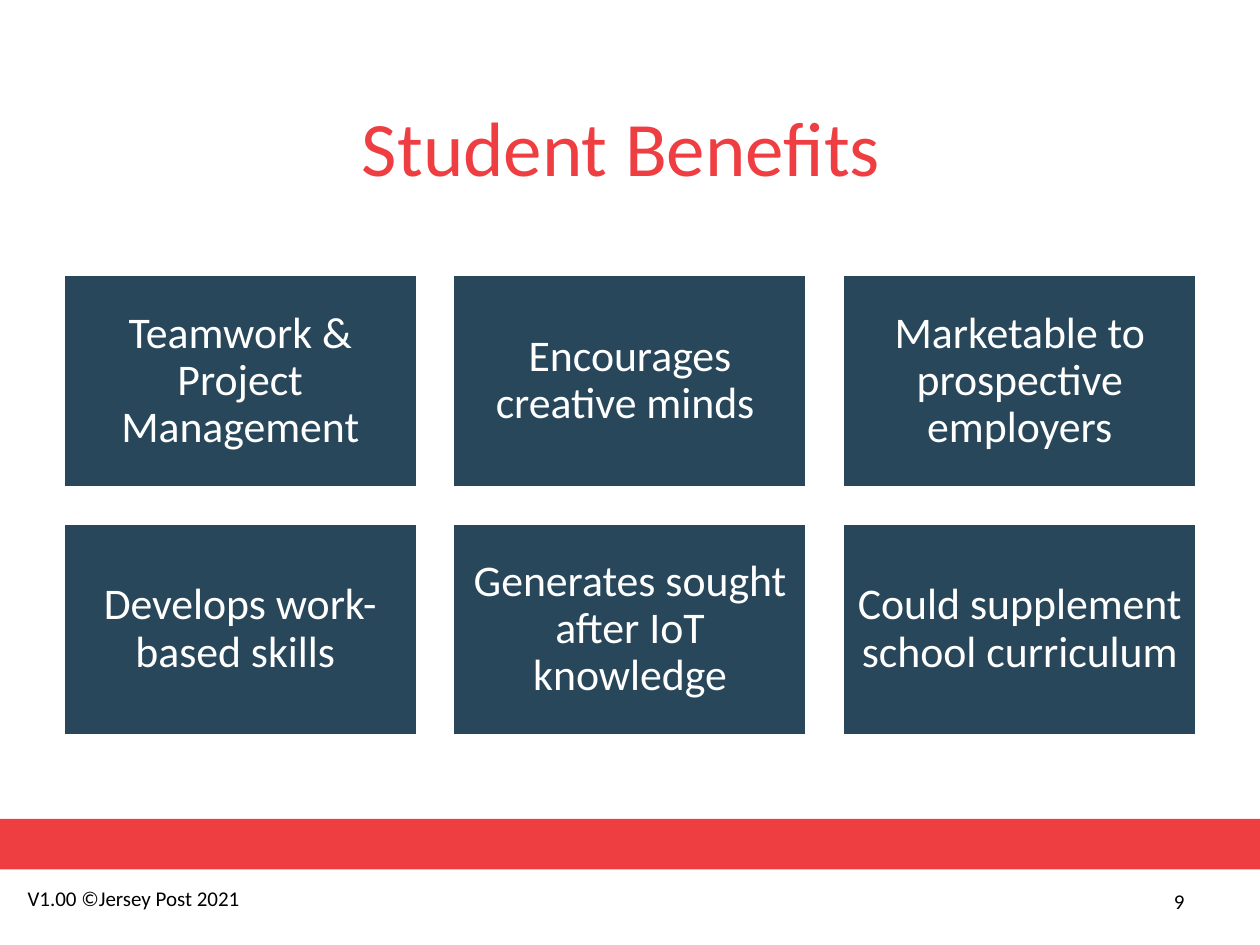
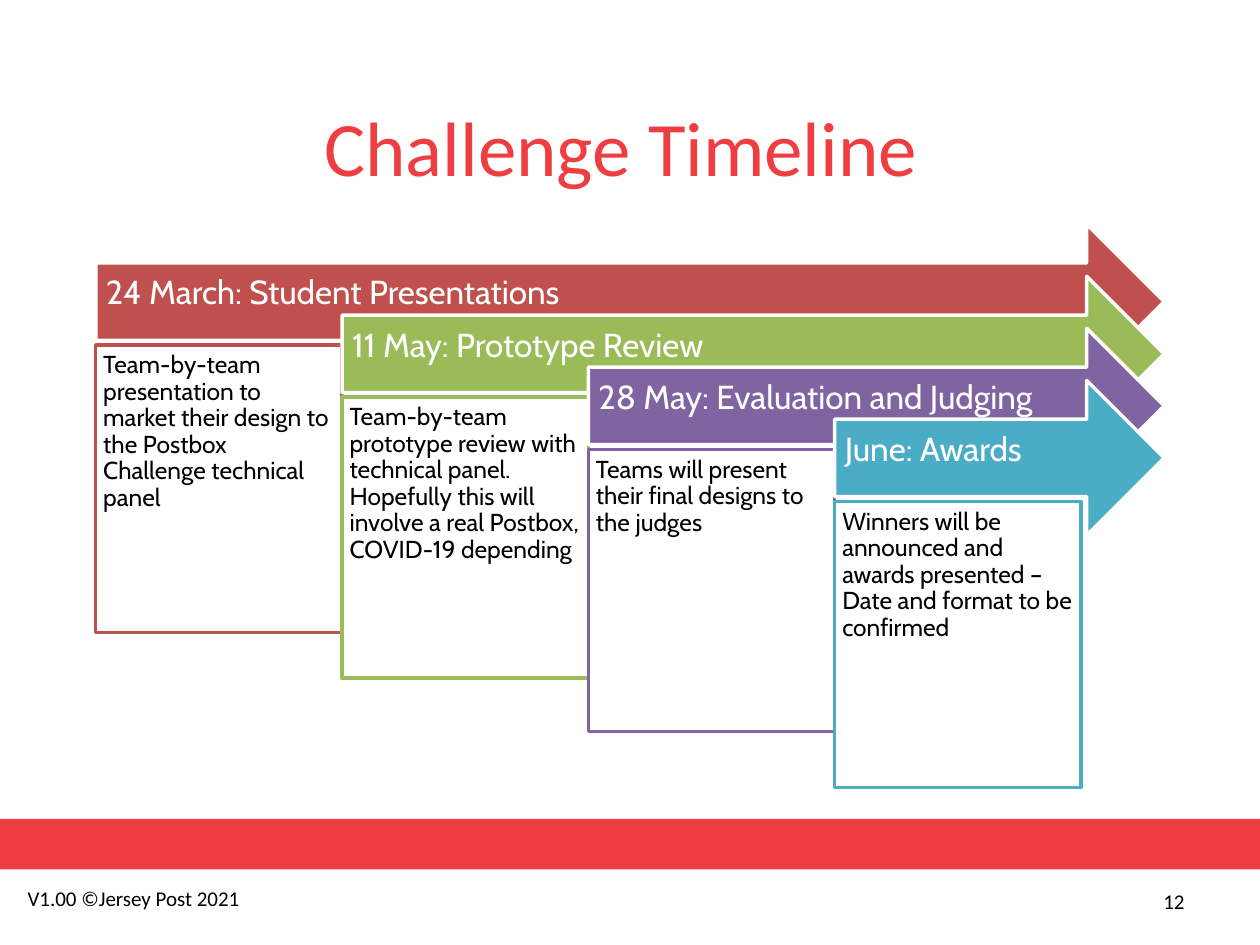
from collections import namedtuple

from pptx import Presentation
from pptx.dml.color import RGBColor
from pptx.enum.shapes import MSO_SHAPE
from pptx.enum.text import MSO_ANCHOR, PP_ALIGN
from pptx.util import Inches, Pt

RECTANGLE, ARROW = MSO_SHAPE.RECTANGLE, MSO_SHAPE.RIGHT_ARROW
TOP, MIDDLE = MSO_ANCHOR.TOP, MSO_ANCHOR.MIDDLE
LEFT, CENTER, RIGHT = PP_ALIGN.LEFT, PP_ALIGN.CENTER, PP_ALIGN.RIGHT

Box = namedtuple("Box", "left top width height")

SLIDE = Box(0, 0, 10, 7.5)
TITLE_ONLY = 5
RED, NAVY, WHITE, BLACK = "EF3E42", "28475A", "FFFFFF", "000000"
OUTLINE = Pt(2)

BAND = Box(0, 6.5, SLIDE.width, 0.4)
COPYRIGHT_BOX = Box(0.12, 6.98, 1.91, 0.3)
NUMBER_BOX = Box(7.17, 6.95, 2.33, 0.4)
TITLE_BOX = Box(0.5, 0.67, 9, 0.97)
BENEFITS_BOX = Box(0.5, 2.18, 9, 3.66)
TIMELINE_BOX = Box(0.76, 1.78, 8.48, 2.47)

TITLE_TEXT = {"size": 44, "name": "Calibri", "color": RED}
FOOTER_TEXT = {"size": 12, "name": "Calibri", "color": BLACK}
BENEFIT_TEXT = {"size": 25, "name": "Calibri", "color": WHITE}
STAGE_TEXT = {"size": 19, "name": "Cabin", "color": WHITE}
DETAIL_TEXT = {"size": 14, "name": "Cabin", "color": BLACK}

BENEFITS = [
    "Teamwork & Project Management",
    "Encourages creative minds ",
    "Marketable to prospective employers",
    "Develops work-based skills ",
    "Generates sought after IoT knowledge",
    "Could supplement school curriculum",
]

# Stage, colour, height of the detail card, detail
STAGES = [
    ("24 March: Student Presentations", "C0504D", 2.28,
     "Team-by-team presentation to market their design to the Postbox "
     "Challenge technical panel"),
    ("11 May: Prototype Review", "9BBB59", 2.23,
     "Team-by-team prototype review with technical panel. Hopefully this "
     "will involve a real Postbox, COVID-19 depending"),
    ("28 May: Evaluation and Judging", "8064A2", 2.24,
     "Teams will present their final designs to the judges"),
    ("June: Awards", "4BACC6", 2.27,
     "Winners will be announced and awards presented – Date and format "
     "to be confirmed"),
]


def color(value):
    return RGBColor.from_string(value)


def inches(box):
    return [Inches(length) for length in box]


def set_all(target, values):
    for name, value in values.items():
        setattr(target, name, value)


def write(shape, text, style, align=LEFT, anchor=MIDDLE, insets=None,
          spacing=None, wrap=True):
    """Fill a shape with one paragraph; insets are left, top, right, bottom."""
    frame = shape.text_frame
    set_all(frame, {"word_wrap": wrap, "vertical_anchor": anchor})
    if insets:
        sides = ("margin_left", "margin_top", "margin_right", "margin_bottom")
        set_all(frame, dict(zip(sides, inches(insets))))
    para = frame.paragraphs[0]
    set_all(para, {"alignment": align, "line_spacing": spacing})
    span = para.add_run()
    span.text = text
    set_all(span.font, {"size": Pt(style["size"]), "name": style["name"]})
    span.font.color.rgb = color(style["color"])


def add_block(page, kind, box, fill, line=None):
    shape = page.shapes.add_shape(kind, *inches(box))
    shape.shadow.inherit = False
    shape.fill.solid()
    shape.fill.fore_color.rgb = color(fill)
    if line:
        shape.line.color.rgb = color(line)
        shape.line.width = OUTLINE
    else:
        shape.line.fill.background()
    return shape


def add_footer(page, number):
    add_block(page, RECTANGLE, BAND, RED)
    write(page.shapes.add_textbox(*inches(COPYRIGHT_BOX)),
          "V1.00 ©Jersey Post 2021", FOOTER_TEXT, anchor=TOP, wrap=False)
    write(page.shapes.add_textbox(*inches(NUMBER_BOX)),
          str(number), FOOTER_TEXT, align=RIGHT)


def add_page(deck, title, number):
    page = deck.slides.add_slide(deck.slide_layouts[TITLE_ONLY])
    heading = page.shapes.title
    set_all(heading, dict(zip(Box._fields, inches(TITLE_BOX))))
    write(heading, title, TITLE_TEXT, align=CENTER)
    add_footer(page, number)
    return page


def add_benefit_grid(page, box, columns=3, rows=2, gap=0.28):
    width = (box.width - gap * (columns - 1)) / columns
    height = (box.height - gap * (rows - 1)) / rows
    for index, benefit in enumerate(BENEFITS):
        row, column = divmod(index, columns)
        tile = Box(box.left + column * (width + gap),
                   box.top + row * (height + gap), width, height)
        write(add_block(page, RECTANGLE, tile, NAVY, WHITE), benefit,
              BENEFIT_TEXT, align=CENTER, insets=[0.1] * 4, spacing=0.9)


def add_timeline(page, box, arrow_height=1.23, tip=0.66, card_drop=0.96):
    """Step arrows down and right to a shared tip, each above its card."""
    column = (box.width - tip) / len(STAGES)
    step = (box.height - arrow_height) / (len(STAGES) - 1)
    for index, (stage, hue, card_height, detail) in enumerate(STAGES):
        left, top = box.left + index * column, box.top + index * step
        arrow = Box(left, top, box.width - index * column, arrow_height)
        card = Box(left, top + card_drop, column, card_height)
        write(add_block(page, ARROW, arrow, hue, WHITE), stage, STAGE_TEXT,
              insets=(0.08, 0.08, 0.28, 0.2), spacing=0.9)
        write(add_block(page, RECTANGLE, card, WHITE, hue), detail,
              DETAIL_TEXT, anchor=TOP, insets=[0.06] * 4, spacing=0.9)


def main():
    deck = Presentation()
    set_all(deck, {"slide_width": Inches(SLIDE.width),
                   "slide_height": Inches(SLIDE.height)})
    add_benefit_grid(add_page(deck, "Student Benefits ", 9), BENEFITS_BOX)
    add_timeline(add_page(deck, "Challenge Timeline ", 12), TIMELINE_BOX)
    deck.save("out.pptx")


if __name__ == "__main__":
    main()
